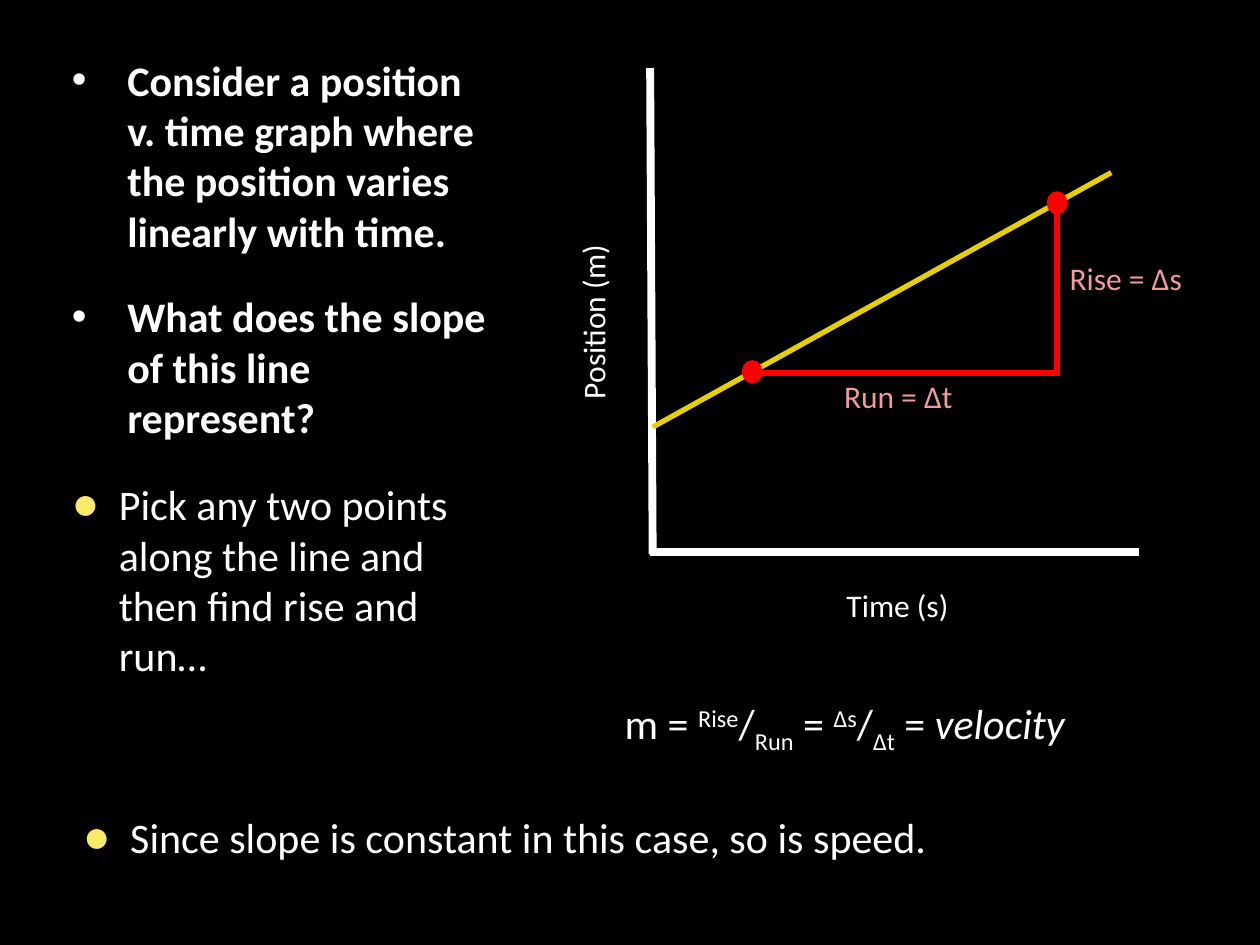
from dataclasses import dataclass
from lxml.etree import SubElement
from pptx import Presentation
from pptx.dml.color import RGBColor
from pptx.enum.shapes import MSO_CONNECTOR, MSO_SHAPE
from pptx.enum.text import MSO_ANCHOR, MSO_AUTO_SIZE
from pptx.oxml.ns import qn
from pptx.util import Inches, Pt


@dataclass(frozen=True)
class Theme:
    font: str = "Calibri"
    back: str = "000000"
    ink: str = "FFFFFF"
    graph: str = "E7CF08"
    mark: str = "FF0000"
    note: str = "F19B9B"
    dot: str = "FAEA68"
    body: int = 24
    label: int = 18
    gap: int = 20


THEME = Theme()


def grid(*cells):
    """Turn cells of a 100 by 75 grid, a tenth of an inch each, into lengths."""
    return [Inches(cell / 10) for cell in cells]


def color(code):
    return RGBColor.from_string(code)


def add_bullet(para, char, indent, tint=None, scale=100):
    props = para._p.get_or_add_pPr()
    inset = grid(indent)[0]
    props.set("marL", str(inset))
    props.set("indent", str(-inset))
    if tint:
        SubElement(SubElement(props, qn("a:buClr")), qn("a:srgbClr"), val=tint)
    SubElement(props, qn("a:buSzPct"), val=str(scale * 1000))
    SubElement(props, qn("a:buFont"), typeface="Arial")
    SubElement(props, qn("a:buChar"), char=char)


def add_run(para, text, size=THEME.body, tint=THEME.ink, bold=False,
            italic=False, base=0):
    """Add a formatted run; base is its rise above the line in percent."""
    run = para.add_run()
    run.text = text
    font = run.font
    font.name, font.size = THEME.font, Pt(size)
    font.bold, font.italic = bold, italic
    font.color.rgb = color(tint)
    if base:
        run._r.get_or_add_rPr().set("baseline", str(base * 1000))


def set_frame(shape, wrap=True):
    frame = shape.text_frame
    frame.word_wrap = wrap
    frame.auto_size = MSO_AUTO_SIZE.NONE
    frame.vertical_anchor = MSO_ANCHOR.TOP
    return frame


def add_box(slide, area, wrap=True):
    return set_frame(slide.shapes.add_textbox(*grid(*area)), wrap)


def add_label(slide, text, area, tint=THEME.ink, turn=0):
    frame = add_box(slide, area, wrap=False)
    add_run(frame.paragraphs[0], text, THEME.label, tint)
    slide.shapes[-1].rotation = turn


def add_point(slide, text, area):
    para = add_box(slide, area).paragraphs[0]
    add_bullet(para, "●", 3.75, THEME.dot, 110)
    add_run(para, text)


def fill_body(holder, area, texts):
    holder.left, holder.top, holder.width, holder.height = grid(*area)
    frame = set_frame(holder)
    for index, text in enumerate(texts):
        para = frame.add_paragraph() if index else frame.paragraphs[0]
        add_bullet(para, "•", 4.4)
        para.space_before = Pt(THEME.gap if index else 0)
        add_run(para, text, bold=True)


def add_line(slide, start, end, tint, width):
    line = slide.shapes.add_connector(
        MSO_CONNECTOR.STRAIGHT, *grid(*start, *end))
    line.line.color.rgb = color(tint)
    line.line.width = Pt(width)
    SubElement(line._element.spPr, qn("a:effectLst"))


def add_dot(slide, x, y, wide=1.3, high=1.5):
    dot = slide.shapes.add_shape(
        MSO_SHAPE.OVAL, *grid(x - wide / 2, y - high / 2, wide, high))
    dot.shadow.inherit = False
    dot.fill.solid()
    dot.fill.fore_color.rgb = dot.line.color.rgb = color(THEME.mark)
    dot.line.width = Pt(2.5)


def draw_graph(slide):
    foot, low, high = 43.8, (59.7, 29.5), (83.9, 16.1)
    add_line(slide, (51.6, 5.4), (51.8, 44), THEME.ink, 4.5)
    add_line(slide, (90.4, foot), (51.6, foot), THEME.ink, 4.5)
    add_label(slide, "Position (m)", (39.5, 23.1, 15.1, 4), turn=270)
    add_label(slide, "Time (s)", (66.2, 46, 10.6, 4))
    add_line(slide, (51.8, 33.9), (88.2, 13.7), THEME.graph, 3)
    corner = (high[0], 29.6)
    add_line(slide, (low[0], corner[1]), (corner[0] + 0.2, corner[1]),
             THEME.mark, 3)
    add_line(slide, high, corner, THEME.mark, 3)
    for spot in (high, low):
        add_dot(slide, *spot)
    add_label(slide, "Run = Δt", (66, 29.4, 10.9, 4), THEME.note)
    add_label(slide, "Rise = Δs", (83.9, 20.1, 11.2, 4), THEME.note)


def add_ratio(para, top, under):
    add_run(para, top, base=30)
    add_run(para, "/")
    add_run(para, under, base=-25)
    add_run(para, " = ")


def add_slope(slide):
    para = add_box(slide, (48.6, 54.9, 39.6, 5)).paragraphs[0]
    add_run(para, "m = ")
    add_ratio(para, "Rise", "Run")
    add_ratio(para, "Δs", "Δt")
    add_run(para, "velocity", italic=True)


def main():
    deck = Presentation()
    deck.slide_width, deck.slide_height = grid(100, 75)
    slide = deck.slides.add_slide(deck.slide_layouts[1])
    slide.background.fill.solid()
    slide.background.fill.fore_color.rgb = color(THEME.back)
    title = slide.shapes.title._element
    title.getparent().remove(title)

    fill_body(slide.placeholders[1], (4.7, 3.8, 35.4, 34.2), (
        "Consider a position v. time graph where the position varies "
        "linearly with time.",
        "What does the slope of this line represent?"))
    draw_graph(slide)
    add_point(slide, "Pick any two points along the line and then find "
              "rise and run…", (4.7, 37.5, 35.4, 34.2))
    add_point(slide, "Since slope is constant in this case, so is speed.",
              (5.6, 63.9, 92.5, 7.8))
    add_slope(slide)
    deck.save("out.pptx")


if __name__ == "__main__":
    main()
